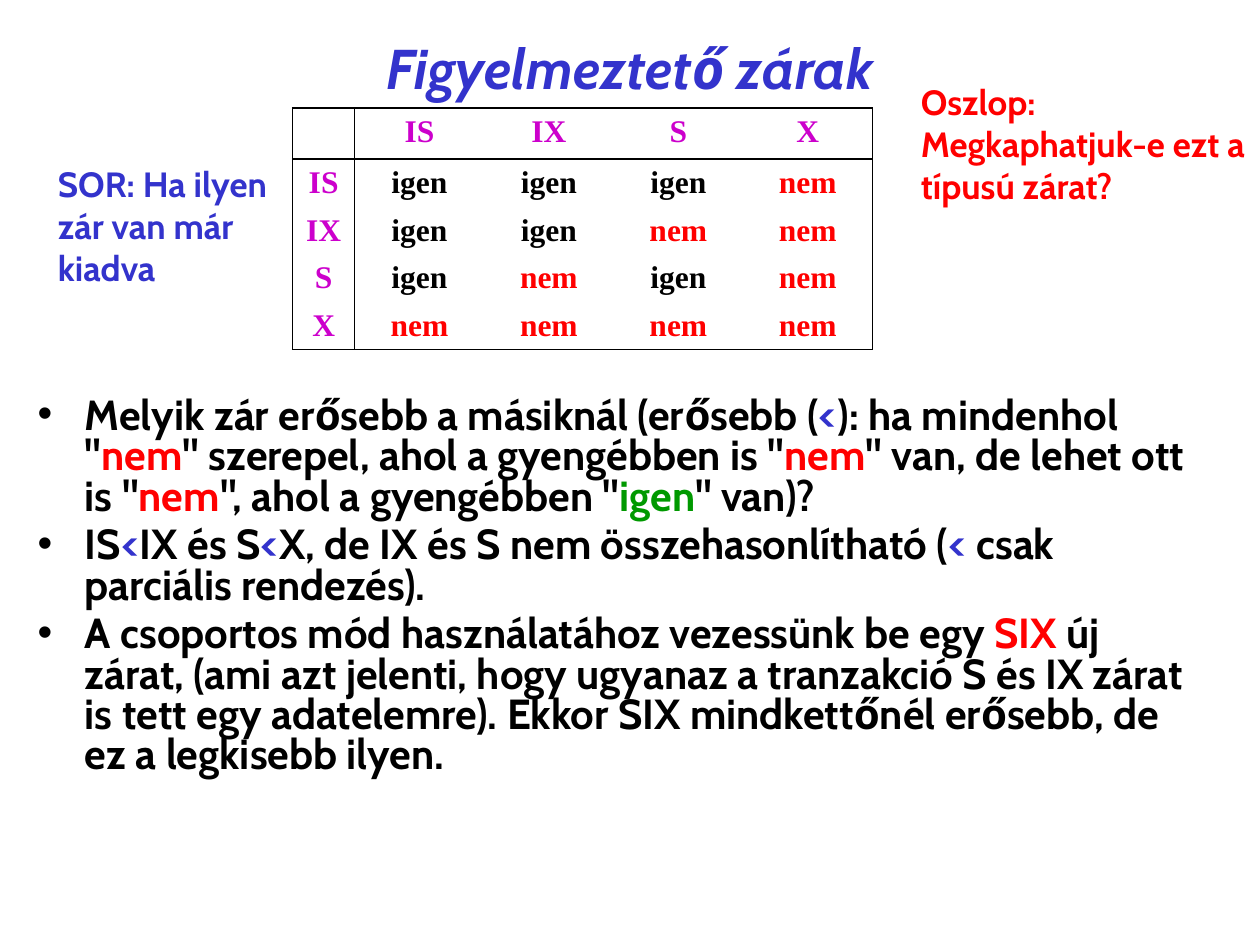
from dataclasses import dataclass
from typing import Any

from lxml.etree import SubElement
from pptx import Presentation
from pptx.dml.color import RGBColor as Color
from pptx.enum.text import MSO_ANCHOR as Anchor, PP_ALIGN as Align
from pptx.oxml.ns import qn
from pptx.util import Pt


@dataclass(frozen=True)
class Theme:
    heading: str = "3333CC"
    ink: str = "000000"
    no: str = "FF0000"
    yes: str = "009900"
    lock: str = "CC00CC"
    face: str = "Cabin"
    table_face: str = "Times New Roman"
    title_size: float = 32
    body_size: float = 24
    note_size: float = 20
    table_size: float = 18
    border: float = 1


THEME = Theme()


@dataclass(frozen=True)
class Span:
    text: str
    color: str = THEME.ink


@dataclass(frozen=True)
class TextBlock:
    left: float
    top: float
    width: float
    height: float
    size: float
    paragraphs: list[list[Span]]
    space_before: float = 0
    line_spacing: float = 1.0
    align: Align = Align.LEFT
    anchor: Anchor = Anchor.TOP
    italic: bool = False
    indent: float = 0


LESS = Span("<", THEME.heading)
NO = Span("nem", THEME.no)
BODY = [
    [Span("Melyik zár erősebb a másiknál (erősebb ("), LESS,
     Span('): ha mindenhol "'), NO, Span('" szerepel, ahol a gyengébben is "'), NO,
     Span('" van, de lehet ott is "'), NO, Span('", ahol a gyengébben "'),
     Span("igen", THEME.yes), Span('" van)?')],
    [Span("IS"), LESS, Span("IX és S"), LESS,
     Span("X, de IX és S nem összehasonlítható ("), LESS,
     Span(" csak parciális rendezés).")],
    [Span("A csoportos mód használatához vezessünk be egy "), Span("SIX", THEME.no),
     Span(" új zárat, (ami azt jelenti, hogy ugyanaz a tranzakció S és IX zárat is "
          "tett egy adatelemre). Ekkor SIX mindkettőnél erősebb, de ez a legkisebb "
          "ilyen.")],
]
BLOCKS = [
    TextBlock(54, 48.2, 612, 13, THEME.title_size,
              [[Span("Figyelmeztető zárak", THEME.heading)]],
              align=Align.CENTER, anchor=Anchor.BOTTOM, italic=True),
    TextBlock(14.4, 224, 680.4, 298.8, THEME.body_size, BODY,
              space_before=4.8, line_spacing=0.8, indent=27),
    TextBlock(26, 89.3, 147.6, 79.2, THEME.note_size,
              [[Span("SOR: Ha ilyen zár van már kiadva", THEME.heading)]],
              space_before=10),
    TextBlock(519.1, 42.5, 200.9, 79.2, THEME.note_size,
              [[Span("Oszlop: Megkaphatjuk-e ezt a típusú zárat?", THEME.no)]],
              space_before=10),
]
LOCKS = ["IS", "IX", "S", "X"]
COMPATIBLE = {"IS": {"IS", "IX", "S"}, "IX": {"IS", "IX"}, "S": {"IS", "S"}, "X": set()}


def apply_format(target: Any, values: dict[str, Any]) -> None:
    """Set every named attribute on the target."""
    for name, value in values.items():
        setattr(target, name, value)


def add_span(para: Any, span: Span, face: str, size: float, italic: bool = False) -> None:
    """Append one bold coloured run to a paragraph."""
    run = para.add_run()
    run.text = span.text
    apply_format(run.font, {"name": face, "size": Pt(size), "bold": True, "italic": italic})
    run.font.color.rgb = Color.from_string(span.color)


def add_bullet(para: Any, indent: float) -> None:
    """Give a paragraph a round bullet with a hanging indent."""
    properties = para._p.get_or_add_pPr()
    properties.set("marL", str(Pt(indent)))
    properties.set("indent", str(-Pt(indent)))
    SubElement(properties, qn("a:buFont"), typeface="Arial")
    SubElement(properties, qn("a:buChar"), char="•")


def add_text(page: Any, block: TextBlock) -> None:
    """Draw a text block with its paragraphs."""
    box = page.shapes.add_textbox(
        Pt(block.left), Pt(block.top), Pt(block.width), Pt(block.height))
    frame = box.text_frame
    apply_format(frame, {"word_wrap": True, "vertical_anchor": block.anchor})
    for index, spans in enumerate(block.paragraphs):
        para = frame.add_paragraph() if index else frame.paragraphs[0]
        apply_format(para, {"alignment": block.align, "line_spacing": block.line_spacing,
                            "space_before": Pt(block.space_before)})
        if block.indent:
            add_bullet(para, block.indent)
        for span in spans:
            add_span(para, span, THEME.face, block.size, block.italic)


def set_borders(cell: Any, sides: dict[str, bool]) -> None:
    """Draw the chosen cell sides and clear the others."""
    properties = cell._tc.get_or_add_tcPr()
    for side, visible in sides.items():
        line = SubElement(properties, qn(f"a:ln{side}"), w=str(Pt(THEME.border)))
        if visible:
            fill = SubElement(line, qn("a:solidFill"))
            SubElement(fill, qn("a:srgbClr"), val=THEME.ink)
        else:
            SubElement(line, qn("a:noFill"))


def lock_span(row: int, column: int) -> Span:
    """Return the header or the compatibility answer for a table position."""
    if row == 0 or column == 0:
        return Span(LOCKS[row + column - 1], THEME.lock)
    return Span("igen") if LOCKS[column - 1] in COMPATIBLE[LOCKS[row - 1]] else NO


def add_lock_table(page: Any) -> None:
    """Draw the lock compatibility matrix."""
    count = len(LOCKS) + 1
    widths = [35.5] + [74] * len(LOCKS)
    heights = [29.2] + [27.1] * len(LOCKS)
    table = page.shapes.add_table(
        count, count, Pt(167.2), Pt(61.8), Pt(sum(widths)), Pt(sum(heights))).table
    apply_format(table, {"first_row": False, "horz_banding": False})
    for index in range(count):
        table.columns[index].width = Pt(widths[index])
        table.rows[index].height = Pt(heights[index])
    for row in range(count):
        for column in range(count):
            cell = table.cell(row, column)
            set_borders(cell, {"L": column < 2, "R": column in (0, count - 1),
                               "T": row < 2, "B": row in (0, count - 1)})
            cell.fill.background()
            if row or column:
                para = cell.text_frame.paragraphs[0]
                para.alignment = Align.CENTER
                add_span(para, lock_span(row, column), THEME.table_face, THEME.table_size)


def main() -> None:
    """Build and save the slide."""
    deck = Presentation()
    apply_format(deck, {"slide_width": Pt(720), "slide_height": Pt(540)})
    page = deck.slides.add_slide(deck.slide_layouts[6])
    add_lock_table(page)
    for block in BLOCKS:
        add_text(page, block)
    deck.save("out.pptx")


if __name__ == "__main__":
    main()
